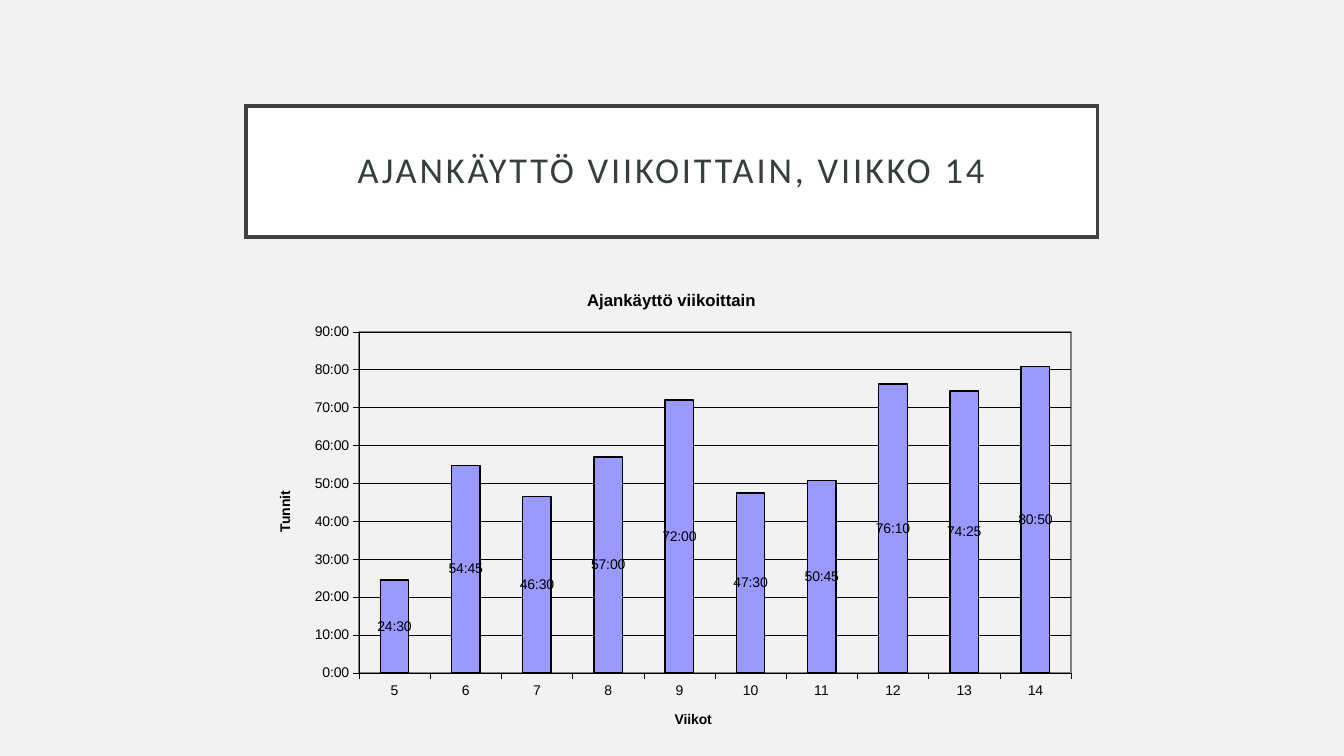
import math

import lxml.etree
import pptx
import pptx.chart.data
import pptx.dml.color
import pptx.enum.chart
import pptx.enum.shapes
import pptx.enum.text
import pptx.oxml
import pptx.oxml.ns
import pptx.util
from pptx.util import Cm, Pt

BLACK = "000000"
WEEKLY_TIMES = {
    "5": "24:30", "6": "54:45", "7": "46:30", "8": "57:00", "9": "72:00",
    "10": "47:30", "11": "50:45", "12": "76:10", "13": "74:25", "14": "80:50",
}
TIME_FORMAT = "[h]:mm"


def color(hex_value):
    return pptx.dml.color.RGBColor.from_string(hex_value)


def days(time):
    """Turn hours:minutes into days, rounded up so that the minute still shows."""
    hours, minutes = map(int, time.split(":"))
    return math.ceil((hours * 60 + minutes) * 10000 / 1440) / 10000


def set_attributes(target, values):
    for name, value in values.items():
        setattr(target, name, value)


def set_font(font, size, hex_value=BLACK, name="Arial", bold=False):
    set_attributes(font, {"size": Pt(size), "name": name, "bold": bold})
    font.color.rgb = color(hex_value)


def set_line(line, width, hex_value=BLACK):
    line.color.rgb = color(hex_value)
    line.width = Pt(width)


def set_layout(parent, inner=False, **percents):
    """Place a chart part by percents of the chart's size."""
    qn = pptx.oxml.ns.qn
    for old in parent.findall(qn("c:layout")):
        parent.remove(old)
    layout = lxml.etree.Element(qn("c:layout"))
    manual = lxml.etree.SubElement(layout, qn("c:manualLayout"))
    entries = {"layoutTarget": "inner"} if inner else {}
    entries.update(xMode="edge", yMode="edge")
    entries.update({tag: percent / 100 for tag, percent in percents.items()})
    for tag, value in entries.items():
        lxml.etree.SubElement(manual, qn(f"c:{tag}")).set("val", str(value))
    text = parent.find(qn("c:tx"))
    parent.insert(0 if text is None else parent.index(text) + 1, layout)


def frame_plot(plot_area, hex_value):
    plot_area.append(pptx.oxml.parse_xml(
        f'<c:spPr {pptx.oxml.ns.nsdecls("c", "a")}><a:noFill/><a:ln w="12700">'
        f'<a:solidFill><a:srgbClr val="{hex_value}"/></a:solidFill></a:ln></c:spPr>'))


def write_chart_title(title, text, size, **position):
    title.text_frame.text = text
    set_font(title.text_frame.paragraphs[0].runs[0].font, size, bold=True)
    set_layout(title.element, **position)


def format_axis(axis, title, **position):
    set_attributes(axis, {
        "major_tick_mark": pptx.enum.chart.XL_TICK_MARK.OUTSIDE,
        "minor_tick_mark": pptx.enum.chart.XL_TICK_MARK.NONE,
    })
    set_font(axis.tick_labels.font, 10)
    set_line(axis.format.line, 0.25)
    write_chart_title(axis.axis_title, title, 10, **position)


def add_heading(slide, text):
    heading = slide.shapes.add_shape(
        pptx.enum.shapes.MSO_SHAPE.RECTANGLE, Cm(6.2), Cm(2.67), Cm(21.46), Cm(3.3))
    heading.shadow.inherit = False
    heading.fill.solid()
    heading.fill.fore_color.rgb = color("FFFFFF")
    set_line(heading.line, 2.5, "404040")
    qn = pptx.oxml.ns.qn
    outline = heading.element.find(".//" + qn("a:ln"))
    lxml.etree.SubElement(outline, qn("a:miter")).set("lim", "800000")
    frame = heading.text_frame
    sides = ("left", "top", "right", "bottom")
    set_attributes(frame, {f"margin_{side}": Cm(0.51) for side in sides})
    set_attributes(frame, {
        "word_wrap": True, "vertical_anchor": pptx.enum.text.MSO_ANCHOR.MIDDLE})
    paragraph = frame.paragraphs[0]
    set_attributes(paragraph, {
        "alignment": pptx.enum.text.PP_ALIGN.CENTER, "line_spacing": 0.9})
    run = paragraph.add_run()
    run.text = text
    set_font(run.font, 26, "383E40", "Calibri")
    heading.element.find(".//" + qn("a:rPr")).set("spc", "200")


def add_time_chart(slide):
    times = pptx.chart.data.CategoryChartData(number_format=TIME_FORMAT)
    times.categories = list(WEEKLY_TIMES)
    times.add_series("Series 1", [days(time) for time in WEEKLY_TIMES.values()])
    chart = slide.shapes.add_chart(
        pptx.enum.chart.XL_CHART_TYPE.COLUMN_STACKED,
        Cm(6.45), Cm(6.86), Cm(20.93), Cm(12.01), times).chart
    set_attributes(chart, {"has_legend": False, "has_title": True})
    set_font(chart.font, 10)
    write_chart_title(chart.chart_title, "Ajankäyttö viikoittain", 12, x=39.5, y=3)

    format_axis(chart.category_axis, "Viikot", x=50.1, y=91.4)
    hours_axis = chart.value_axis
    format_axis(hours_axis, "Tunnit", x=2.1, y=45.4)
    body = hours_axis.axis_title.element.find(".//" + pptx.oxml.ns.qn("a:bodyPr"))
    body.set("rot", "-5400000")
    body.set("vert", "horz")
    set_attributes(hours_axis, {
        "minimum_scale": 0, "maximum_scale": 90 / 24,
        "major_unit": 10 / 24, "has_major_gridlines": True})
    set_line(hours_axis.major_gridlines.format.line, 0.25)
    set_attributes(hours_axis.tick_labels, {
        "number_format": TIME_FORMAT, "number_format_is_linked": False})

    plot = chart.plots[0]
    set_attributes(plot, {
        "gap_width": 150, "overlap": 100,
        "vary_by_categories": False, "has_data_labels": True})
    set_attributes(plot.data_labels, {
        "show_value": True, "number_format": TIME_FORMAT,
        "number_format_is_linked": False,
        "position": pptx.enum.chart.XL_LABEL_POSITION.CENTER})
    set_font(plot.data_labels.font, 10)
    bars = plot.series[0].format
    bars.fill.solid()
    bars.fill.fore_color.rgb = color("9999FF")
    set_line(bars.line, 1)

    plot_area = chart.element.find(".//" + pptx.oxml.ns.qn("c:plotArea"))
    set_layout(plot_area, inner=True, x=12.4, y=12.5, w=85.75, h=71.6)
    frame_plot(plot_area, "808080")


def main():
    presentation = pptx.Presentation()
    set_attributes(presentation, {"slide_width": Cm(33.87), "slide_height": Cm(19.05)})
    slide = presentation.slides.add_slide(presentation.slide_layouts[6])
    slide.background.fill.solid()
    slide.background.fill.fore_color.rgb = color("F2F2F2")
    add_heading(slide, "AJANKÄYTTÖ VIIKOITTAIN, VIIKKO 14")
    add_time_chart(slide)
    presentation.save("out.pptx")


if __name__ == "__main__":
    main()
